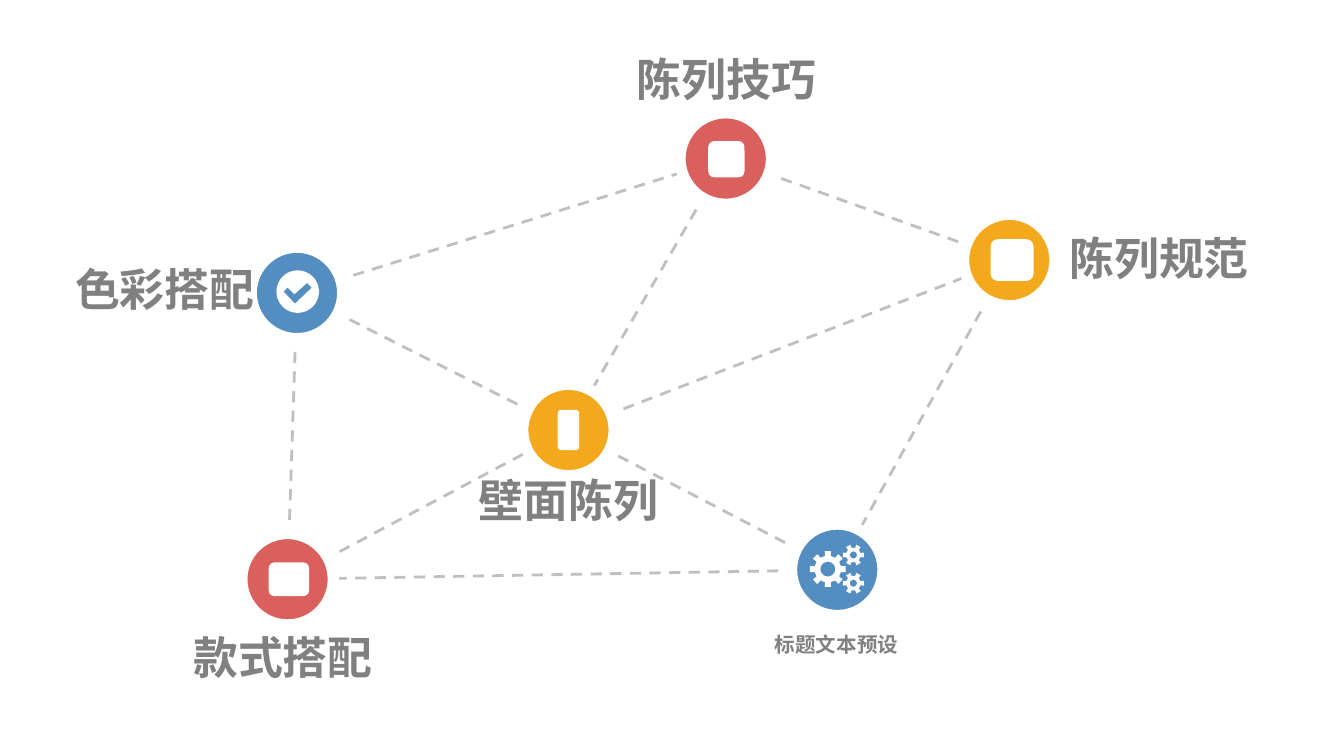
from math import cos, pi, sin

from lxml.etree import SubElement
from pptx import Presentation
from pptx.dml.color import RGBColor
from pptx.enum.dml import MSO_LINE
from pptx.enum.shapes import MSO_CONNECTOR, MSO_SHAPE
from pptx.enum.text import MSO_ANCHOR, PP_ALIGN
from pptx.oxml.ns import qn
from pptx.util import Inches, Pt

COLUMNS = 100
FONT = "Noto Sans CJK SC"
BLUE, RED, AMBER = "548DBF", "D9605D", "F4A81C"
WHITE, LINK_GREY, TEXT_GREY = "FFFFFF", "BFBFBF", "808080"

TOPICS = {
    "colour": ((22.1, 21.8), BLUE, "色彩搭配", (12.25, 21.45), 24),
    "style": ((21.4, 43.1), RED, "款式搭配", (21.05, 48.85), 24),
    "wall": ((42.3, 32), AMBER, "壁面陈列", (42.3, 37.2), 24),
    "preset": ((62.3, 42.4), BLUE, "标题文本预设", (62.25, 47.95), 11),
    "skill": ((54, 11.8), RED, "陈列技巧", (54.05, 5.85), 24),
    "standard": ((75.1, 19.35), AMBER, "陈列规范", (86.25, 19.15), 24),
}
LINKS = [
    ("colour", "wall"), ("style", "wall"), ("colour", "style"),
    ("skill", "wall"), ("colour", "skill"), ("skill", "standard"),
    ("wall", "standard"), ("preset", "wall"), ("standard", "preset"),
    ("preset", "style"),
]
BADGES = {
    "wall": ((42.3, 32), (1.6, 3)),
    "style": ((21.5, 43.1), (3, 2.5)),
    "standard": ((75.3, 19.35), (3.2, 3.1)),
    "skill": ((54.05, 11.85), (2.7, 2.7)),
}
GEARS = [
    ((61.6, 42.35), 8, 1.35, 1, 0.55),
    ((63.5, 41.3), 6, 0.8, 0.55, 0.26),
    ((63.5, 43.4), 6, 0.8, 0.55, 0.26),
]
TICK = [(21.1, 21.7), (21.4, 21.4), (21.9, 21.9), (22.85, 21.05),
        (23.2, 21.4), (21.95, 22.6)]


def colour(code):
    return RGBColor.from_string(code)


def polar(centre, radius, angle):
    return centre[0] + radius * cos(angle), centre[1] + radius * sin(angle)


def ring(centre, radius, steps=48):
    return [polar(centre, radius, 2 * pi * i / steps) for i in range(steps)]


def cog(centre, teeth, tip, root):
    profile = [(root, -0.27), (tip, -0.22), (tip, 0.22), (root, 0.27)]
    return [polar(centre, radius, 2 * pi * (tooth + share) / teeth)
            for tooth in range(teeth) for radius, share in profile]


class NetworkSlide:
    def __init__(self, deck):
        self.slide = deck.slides.add_slide(deck.slide_layouts[6])
        self.shapes = self.slide.shapes
        self.cell = deck.slide_width / COLUMNS

    def emu(self, *cells):
        return [round(self.cell * cell) for cell in cells]

    def frame(self, centre, size):
        (x, y), (width, height) = centre, size
        return self.emu(x - width / 2, y - height / 2, width, height)

    def paint(self, shape, fill):
        shape.shadow.inherit = False
        shape.fill.solid()
        shape.fill.fore_color.rgb = colour(fill)
        shape.line.fill.background()

    def link(self, start, end):
        link = self.shapes.add_connector(
            MSO_CONNECTOR.STRAIGHT, *self.emu(*start, *end))
        link.line.color.rgb = colour(LINK_GREY)
        link.line.width = Pt(1.5)
        link.line.dash_style = MSO_LINE.DASH
        SubElement(link._element.spPr, qn("a:effectLst"))

    def node(self, centre, fill):
        node = self.shapes.add_shape(
            MSO_SHAPE.OVAL, *self.frame(centre, (6.8, 6.8)))
        self.paint(node, fill)
        node.line.color.rgb = colour(WHITE)
        node.line.width = Pt(6)
        node.rotation = 349.1

    def badge(self, centre, size):
        badge = self.shapes.add_shape(
            MSO_SHAPE.ROUNDED_RECTANGLE, *self.frame(centre, size))
        self.paint(badge, WHITE)

    def icon(self, contours):
        outlines = [[self.emu(*point) for point in contour]
                    for contour in contours]
        builder = self.shapes.build_freeform(*outlines[0][0])
        for index, outline in enumerate(outlines):
            if index:
                builder.move_to(*outline[0])
            builder.add_line_segments(outline[1:], close=True)
        self.paint(builder.convert_to_shape(), WHITE)

    def label(self, text, centre, size):
        frame = self.shapes.add_textbox(
            *self.frame(centre, (17.5, 2.7))).text_frame
        frame.margin_left = frame.margin_right = 0
        frame.margin_top = frame.margin_bottom = 0
        frame.word_wrap = False
        frame.vertical_anchor = MSO_ANCHOR.MIDDLE
        paragraph = frame.paragraphs[0]
        paragraph.alignment = PP_ALIGN.CENTER
        run = paragraph.add_run()
        run.text = text
        run.font.size = Pt(size)
        run.font.bold = True
        run.font.color.rgb = colour(TEXT_GREY)
        run.font.name = FONT
        SubElement(run._r.get_or_add_rPr(), qn("a:ea"), typeface=FONT)


def main():
    deck = Presentation()
    deck.slide_width = Inches(10)
    deck.slide_height = deck.slide_width * 9 // 16
    network = NetworkSlide(deck)
    for start, end in LINKS:
        network.link(TOPICS[start][0], TOPICS[end][0])
    for centre, fill, *_ in TOPICS.values():
        network.node(centre, fill)
    for centre, size in BADGES.values():
        network.badge(centre, size)
    network.icon([contour for centre, teeth, tip, root, hole in GEARS
                  for contour in (cog(centre, teeth, tip, root),
                                  ring(centre, hole))])
    network.icon([ring((22.15, 21.7), 1.58), TICK])
    for _, _, text, centre, size in TOPICS.values():
        network.label(text, centre, size)
    deck.save("out.pptx")


if __name__ == "__main__":
    main()
